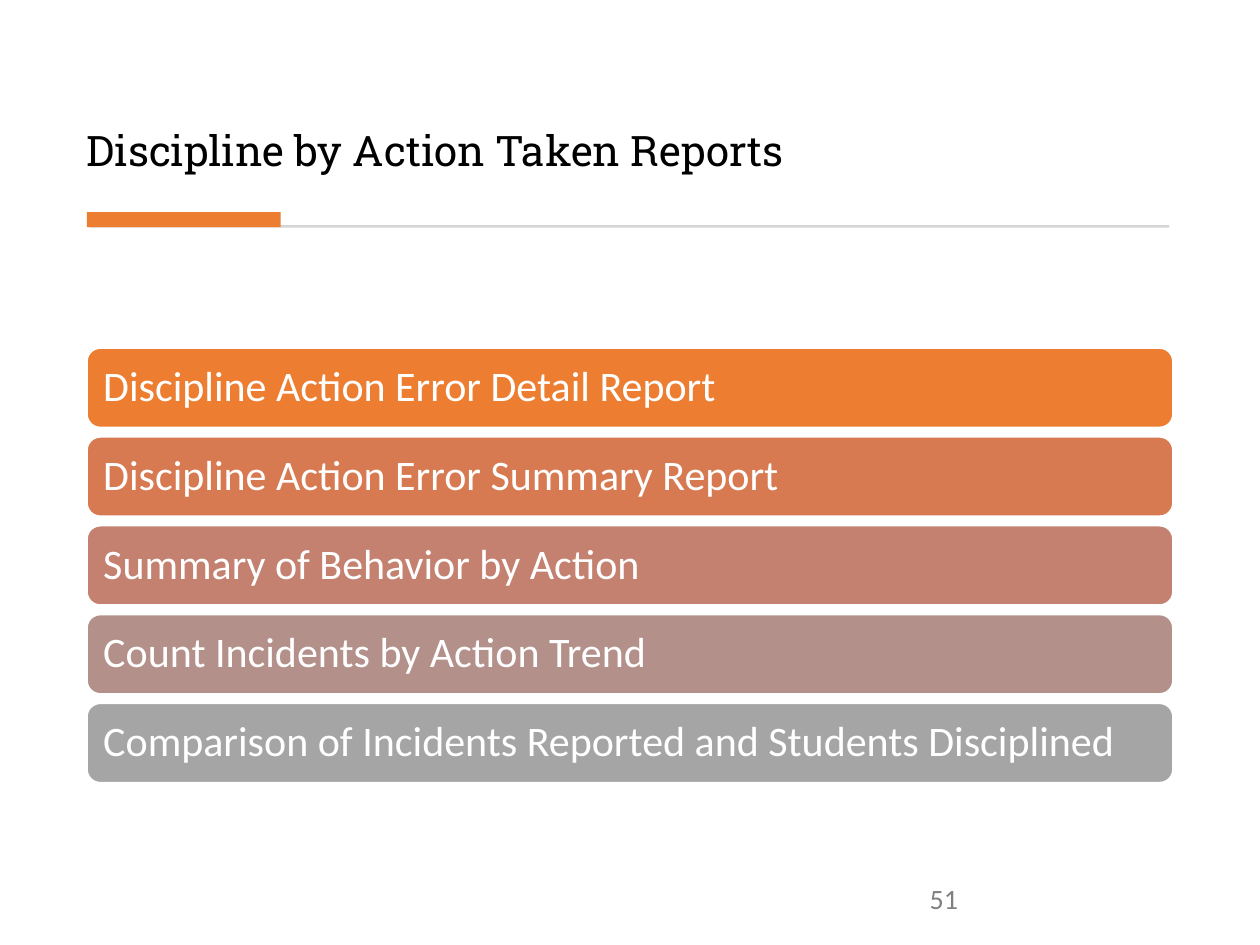
from dataclasses import dataclass

from pptx import Presentation
from pptx.dml.color import RGBColor
from pptx.enum import shapes, text
from pptx.util import Pt


@dataclass(frozen=True)
class Theme:
    heading_font: str = "Roboto Slab"
    body_font: str = "Calibri"
    heading_size: float = 24
    report_size: float = 24
    number_size: float = 16
    black: str = "000000"
    white: str = "FFFFFF"
    accent: str = "ED7D31"
    rule: str = "D5D5D5"
    number: str = "808080"
    reports: tuple = ("ED7D31", "D87A51", "C48170", "B4908B", "A5A5A5")


THEME = Theme()
LEFT, WIDTH = 49.7, 620.6
REPORTS_TOP, REPORT_HEIGHT, REPORT_PITCH = 198.9, 45.4, 50.75
REPORTS = (
    "Discipline Action Error Detail Report",
    "Discipline Action Error Summary Report",
    "Summary of Behavior by Action",
    "Count Incidents by Action Trend",
    "Comparison of Incidents Reported and Students Disciplined",
)


def add_words(paragraph, words, font, size, color):
    run = paragraph.add_run()
    run.text = words
    run.font.name = font
    run.font.size = Pt(size)
    run.font.color.rgb = RGBColor.from_string(color)


def set_title(slide, words):
    title = slide.shapes.title
    title.left, title.top = Pt(LEFT), Pt(20.2)
    title.width, title.height = Pt(WIDTH), Pt(79.9)
    frame = title.text_frame
    frame.margin_left = frame.margin_right = 0
    frame.margin_top = frame.margin_bottom = 0
    frame.auto_size = text.MSO_AUTO_SIZE.NONE
    frame.vertical_anchor = text.MSO_ANCHOR.BOTTOM
    heading = frame.paragraphs[0]
    heading.alignment = text.PP_ALIGN.LEFT
    heading.line_spacing = 0.9
    add_words(heading, words, THEME.heading_font, THEME.heading_size, THEME.black)


def add_block(slide, kind, left, top, width, height, color):
    block = slide.shapes.add_shape(kind, Pt(left), Pt(top), Pt(width), Pt(height))
    block.shadow.inherit = False
    block.fill.solid()
    block.fill.fore_color.rgb = RGBColor.from_string(color)
    block.line.fill.background()
    return block


def add_report(slide, top, name, color):
    bar = add_block(slide, shapes.MSO_SHAPE.ROUNDED_RECTANGLE,
                    LEFT, top, WIDTH, REPORT_HEIGHT, color)
    bar.line.color.rgb = RGBColor.from_string(THEME.white)
    bar.line.width = Pt(1)
    frame = bar.text_frame
    frame.word_wrap = True
    frame.vertical_anchor = text.MSO_ANCHOR.MIDDLE
    label = frame.paragraphs[0]
    label.alignment = text.PP_ALIGN.LEFT
    label.line_spacing = 0.9
    add_words(label, name, THEME.body_font, THEME.report_size, THEME.white)


def add_page_number(slide, number):
    box = slide.shapes.add_textbox(Pt(524.2), Pt(500.4), Pt(146.2), Pt(28.8))
    box.text_frame.word_wrap = True
    line = box.text_frame.paragraphs[0]
    line.space_after = Pt(6)
    add_words(line, number, THEME.body_font, THEME.number_size, THEME.number)


def main():
    deck = Presentation()
    deck.slide_width, deck.slide_height = Pt(720), Pt(540)
    slide = deck.slides.add_slide(deck.slide_layouts[5])
    set_title(slide, "Discipline by Action Taken Reports")
    rectangle = shapes.MSO_SHAPE.RECTANGLE
    add_block(slide, rectangle, 51.1, 128.6, 617, 1.6, THEME.rule)
    add_block(slide, rectangle, LEFT, 121.2, 110.7, 8.6, THEME.accent)
    add_page_number(slide, "51")
    for index, (name, color) in enumerate(zip(REPORTS, THEME.reports)):
        add_report(slide, REPORTS_TOP + index * REPORT_PITCH, name, color)
    deck.save("out.pptx")


if __name__ == "__main__":
    main()
